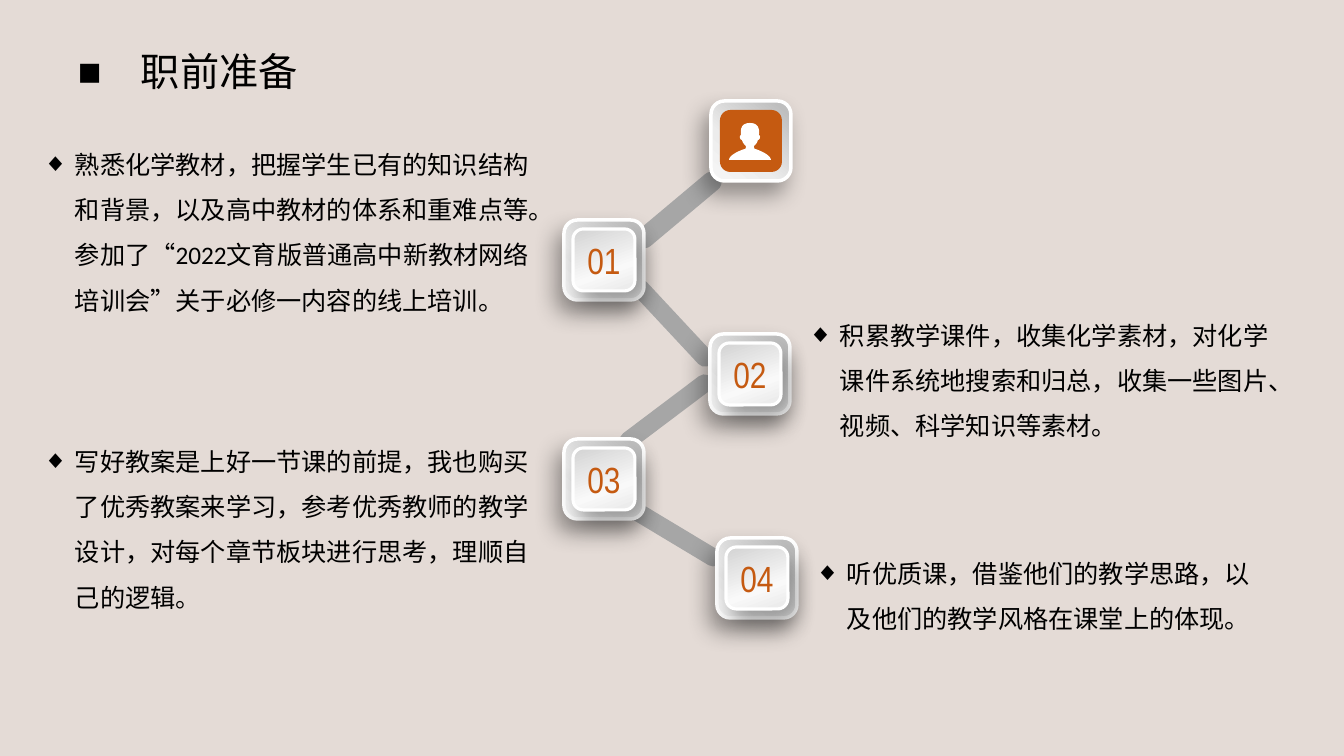
from pptx import Presentation
from pptx.dml.color import RGBColor
from pptx.enum.lang import MSO_LANGUAGE_ID as Lang
from pptx.enum.shapes import MSO_SHAPE as Shape
from pptx.enum.text import MSO_ANCHOR as Anchor, MSO_AUTO_SIZE as Auto, PP_ALIGN as Align
from pptx.oxml import parse_xml
from pptx.oxml.ns import nsdecls
from pptx.util import Pt

PX = 914400 / 100.8
ORANGE, GREY, WHITE, BLACK = "C55A11", "A6A6A6", "FFFFFF", "000000"
TILE, INSET = 80, 9
OUTER = [(9, "BEBEBE"), (63, "ECECEC"), (100, "F7F7F7")]
INNER = [(0, "D3D3D3"), (66, "F9F9F9"), (93, "ECECEC")]

# left, top, width, height, turn
LINKS = [
    (616, 314, 113, 18, 47),
    (624, 200, 108, 20, 320),
    (616, 524, 113, 18, 31),
    (610, 403, 113, 18, 323),
]
STEPS = [("01", 564, 220), ("02", 710, 334), ("03", 564, 439), ("04", 717, 538)]
NOTES = [
    (33, 129, 517, 194, "熟悉化学教材，把握学生已有的知识结构和背景，以及高中教材的体系和重难点等。"
     "参加了“2022文育版普通高中新教材网络培训会”关于必修一内容的线上培训。"),
    (798, 300, 482, 147, "积累教学课件，收集化学素材，对化学课件系统地搜索和归总，"
     "收集一些图片、视频、科学知识等素材。"),
    (33, 426, 506, 194, "写好教案是上好一节课的前提，我也购买了优秀教案来学习，"
     "参考优秀教师的教学设计，对每个章节板块进行思考，理顺自己的逻辑。"),
    (805, 538, 474, 102, "听优质课，借鉴他们的教学思路，以及他们的教学风格在课堂上的体现。"),
]
# Right half of the bust, from crown to shoulder: two handles and an end per curve
BUST = [
    ((11, 0), (9, 10), (9, 12)),
    ((11, 13), (10, 17), (8, 17)),
    ((7, 21), (4, 23), (4, 23)),
    ((4, 23), (4, 26), (5, 26)),
    ((9, 27), (21, 32), (21, 37)),
]


def emu(*nums):
    return [round(n * PX) for n in nums]


def color(code):
    return RGBColor.from_string(code)


def paint(shape, code):
    shape.fill.solid()
    shape.fill.fore_color.rgb = color(code)
    shape.line.fill.background()
    shape.shadow.inherit = False


def add_round(shapes, x, y, w, h):
    return shapes.add_shape(Shape.ROUNDED_RECTANGLE, *emu(x, y, w, h))


def add_link(shapes, x, y, w, h, turn):
    bar = add_round(shapes, x, y, w, h)
    bar.adjustments[0] = 0.5
    bar.rotation = turn
    paint(bar, GREY)


def add_plate(shapes, x, y, size, stops, angle, edge, cast):
    """Add a raised square with a gradient face and a shadow cast at an angle."""
    plate = add_round(shapes, x, y, size, size)
    plate.line.color.rgb = color(WHITE)
    plate.line.width = Pt(edge)
    marks = "".join(
        f'<a:gs pos="{pos * 1000}"><a:srgbClr val="{code}"/></a:gs>' for pos, code in stops)
    face = parse_xml(
        f'<a:gradFill {nsdecls("a")} rotWithShape="1"><a:gsLst>{marks}</a:gsLst>'
        f'<a:lin ang="{angle * 60000}" scaled="0"/></a:gradFill>')
    shade = parse_xml(
        f'<a:effectLst {nsdecls("a")}><a:outerShdw blurRad="{Pt(16)}" dist="{Pt(10)}" '
        f'dir="{cast * 60000}" algn="ctr" rotWithShape="0"><a:srgbClr val="1A1A1A">'
        '<a:alpha val="40000"/></a:srgbClr></a:outerShdw></a:effectLst>')
    props = plate.element.spPr
    props.find("a:prstGeom", props.nsmap).addnext(face)
    props.append(shade)
    return plate


def add_base(slide, x, y):
    """Add a group holding the outer plate and return its shapes."""
    shapes = slide.shapes.add_group_shape().shapes
    add_plate(shapes, x, y, TILE, OUTER, 130, 2.5, 120)
    return shapes


def add_step(slide, label, x, y):
    shapes = add_base(slide, x, y)
    plate = add_plate(shapes, x + INSET, y + INSET, 62, INNER, 70, 2.25, 60)
    frame = plate.text_frame
    frame.word_wrap = False
    frame.vertical_anchor = Anchor.MIDDLE
    frame.text = label
    para = frame.paragraphs[0]
    para.alignment = Align.CENTER
    style(para.runs[0].font, "Arial Narrow", 26, ORANGE)


def add_user(slide, x, y):
    shapes = add_base(slide, x, y)
    paint(add_round(shapes, x + INSET, y + INSET, 62, 62), ORANGE)
    add_bust(shapes, x + 39, y + 22)


def add_bust(shapes, mid, top):
    """Trace one side of the bust and mirror it about the middle."""
    half = [(0, 0)]
    for one, two, end in BUST:
        start = half[-1]
        for t in (i / 8 for i in range(1, 9)):
            s = 1 - t
            half.append(tuple(
                s**3 * a + 3 * s * s * t * b + 3 * s * t * t * c + t**3 * d
                for a, b, c, d in zip(start, one, two, end)))
    ring = half + [(-x, y) for x, y in reversed(half[1:])]
    spots = [emu(mid + x, top + y) for x, y in ring]
    build = shapes.build_freeform(*spots[0])
    build.add_line_segments(spots[1:])
    paint(build.convert_to_shape(), WHITE)


def style(font, name, size, code):
    font.name = name
    font.size = Pt(size)
    font.color.rgb = color(code)


def add_item(slide, box, text, mark, hang, size, space):
    """Add a text box with one bulleted paragraph."""
    frame = slide.shapes.add_textbox(*emu(*box)).text_frame
    frame.word_wrap = True
    frame.text = text
    para = frame.paragraphs[0]
    props = para._p.get_or_add_pPr()
    dent = emu(hang)[0]
    props.set("marL", str(dent))
    props.set("indent", str(-dent))
    props.append(parse_xml(f'<a:buFont {nsdecls("a")} typeface="Arial"/>'))
    props.append(parse_xml(f'<a:buChar {nsdecls("a")} char="{mark}"/>'))
    para.line_spacing = space
    font = para.runs[0].font
    style(font, "Calibri", size, BLACK)
    font.language_id = Lang.SIMPLIFIED_CHINESE
    return frame


def main():
    deck = Presentation()
    deck.slide_width, deck.slide_height = emu(1344, 756)
    slide = deck.slides.add_slide(deck.slide_layouts[6])
    back = slide.background.fill
    back.solid()
    back.fore_color.rgb = color("E4DBD6")

    title = add_item(slide, (68, 35, 1210, 78), "职前准备", "■", 63, 28, 0.9)
    title.vertical_anchor = Anchor.MIDDLE
    for link in LINKS:
        add_link(slide.shapes, *link)
    for step in STEPS:
        add_step(slide, *step)
    add_user(slide, 711, 101)
    for *box, text in NOTES:
        note = add_item(slide, box, text, "◆", 32, 18, 1.5)
        note.auto_size = Auto.SHAPE_TO_FIT_TEXT
    deck.save("out.pptx")


if __name__ == "__main__":
    main()
